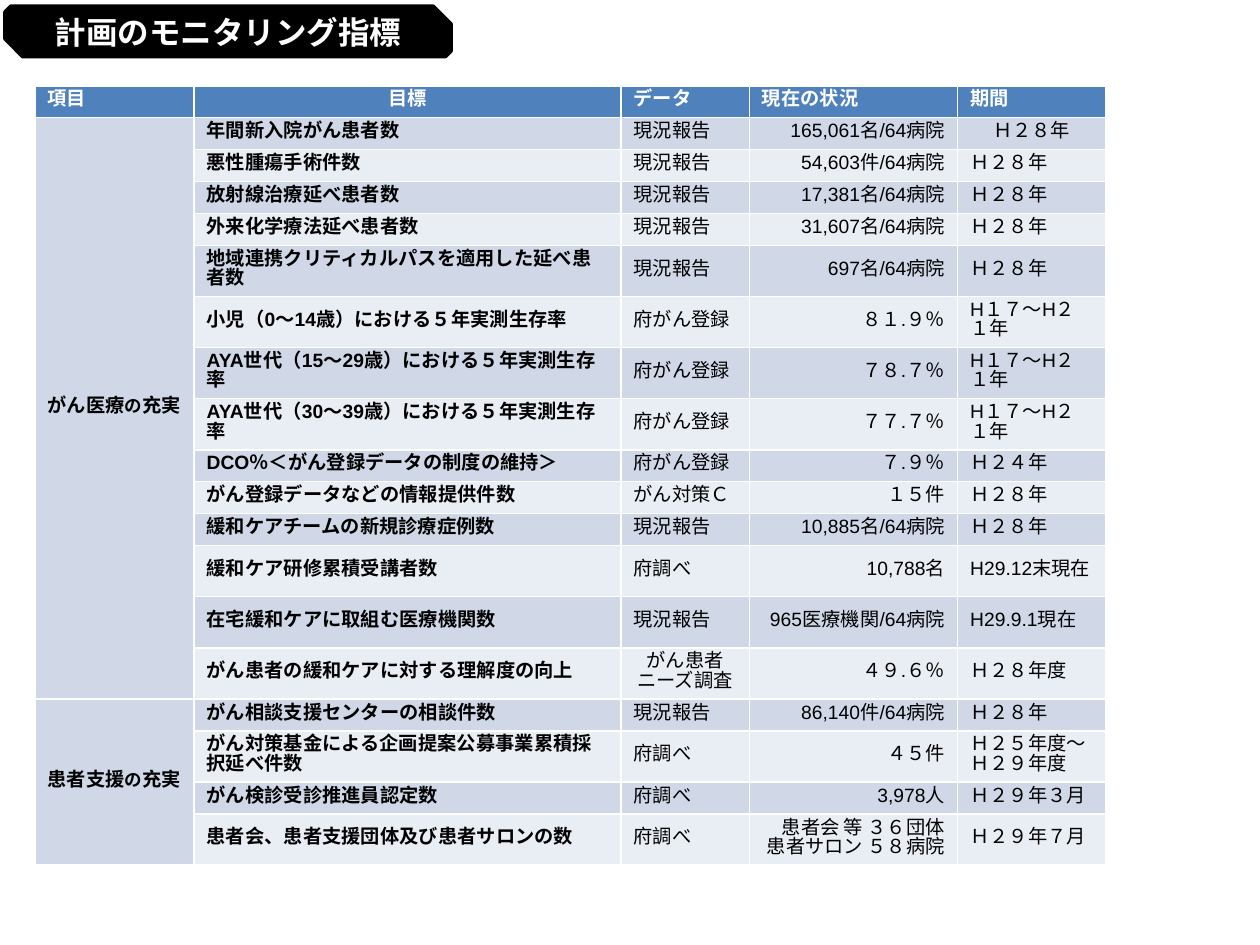
import pptx
import pptx.dml.color
import pptx.enum.shapes
import pptx.enum.text
import pptx.util

Pt = pptx.util.Pt
ALIGN = pptx.enum.text.PP_ALIGN
MIDDLE = pptx.enum.text.MSO_ANCHOR.MIDDLE

COLORS = {"black": "000000", "white": "FFFFFF", "header": "4F81BD",
          "odd": "D0D8E8", "even": "E9EDF4"}

TITLE = "計画のモニタリング指標"
HEADERS = ["項目", "目標", "データ", "現在の状況", "期間"]
COLUMN_WIDTHS = [90.9, 243.9, 73.4, 119, 84.8]
SECTIONS = [
    (("がん医療", "の", "充実"), [
        ("年間新入院がん患者数", "現況報告", "165,061名/64病院", "Ｈ２８年"),
        ("悪性腫瘍手術件数", "現況報告", "54,603件/64病院", "Ｈ２８年"),
        ("放射線治療延べ患者数", "現況報告", "17,381名/64病院", "Ｈ２８年"),
        ("外来化学療法延べ患者数", "現況報告", "31,607名/64病院", "Ｈ２８年"),
        ("地域連携クリティカルパスを適用した延べ患者数", "現況報告", "697名/64病院", "Ｈ２８年"),
        ("小児（0～14歳）における５年実測生存率", "府がん登録", "８１.９％", "H１７～H２１年"),
        ("AYA世代（15～29歳）における５年実測生存率", "府がん登録", "７８.７％", "H１７～H２１年"),
        ("AYA世代（30～39歳）における５年実測生存率", "府がん登録", "７７.７％", "H１７～H２１年"),
        ("DCO％＜がん登録データの制度の維持＞", "府がん登録", "７.９％", "Ｈ２４年"),
        ("がん登録データなどの情報提供件数", "がん対策Ｃ", "１５件", "Ｈ２８年"),
        ("緩和ケアチームの新規診療症例数", "現況報告", "10,885名/64病院", "Ｈ２８年"),
        ("緩和ケア研修累積受講者数", "府調べ", "10,788名", "H29.12末現在"),
        ("在宅緩和ケアに取組む医療機関数", "現況報告", "965医療機関/64病院", "H29.9.1現在"),
        ("がん患者の緩和ケアに対する理解度の向上", "がん患者\nニーズ調査", "４９.６％", "Ｈ２８年度"),
    ]),
    (("患者支援", "の", "充実"), [
        ("がん相談支援センターの相談件数", "現況報告", "86,140件/64病院", "Ｈ２８年"),
        ("がん対策基金による企画提案公募事業累積採択延べ件数", "府調べ", "４５件",
         "Ｈ２５年度～\nＨ２９年度"),
        ("がん検診受診推進員認定数", "府調べ", "3,978人", "Ｈ２９年３月"),
        ("患者会、患者支援団体及び患者サロンの数", "府調べ",
         "患者会 等 ３６団体\n患者サロン ５８病院", "Ｈ２９年７月"),
    ]),
]
TWO_LINE_ROWS = {5, 6, 7, 8, 12, 13, 14, 16, 18}
CENTERED_CELLS = {(0, 1), (1, 4), (14, 2)}
VALUE_COLUMN = 3
LINE_HEIGHT = 11
CELL_PADDING = 7.2


def rgb(name):
    return pptx.dml.color.RGBColor.from_string(COLORS[name])


def style_font(font, size, color, bold, family="Arial"):
    font.size = Pt(size)
    font.name = family
    font.bold = bold
    font.color.rgb = rgb(color)


def fill_cell(table, row, column, text, fill, color="black", bold=False):
    cell = table.cell(row, column)
    cell.fill.solid()
    cell.fill.fore_color.rgb = rgb(fill)
    cell.vertical_anchor = MIDDLE
    cell.text_frame.text = text
    for paragraph in cell.text_frame.paragraphs:
        paragraph.line_spacing = Pt(LINE_HEIGHT)
        if (row, column) in CENTERED_CELLS:
            paragraph.alignment = ALIGN.CENTER
        elif column == VALUE_COLUMN and row > 0:
            paragraph.alignment = ALIGN.RIGHT
        style_font(paragraph.font, 11, color, bold)
    return cell


def add_title(slide):
    shape = slide.shapes.add_shape(
        pptx.enum.shapes.MSO_SHAPE.SNIP_2_DIAG_RECTANGLE, Pt(2.9), Pt(3.6), Pt(254.9), Pt(28.8))
    shape.adjustments[0] = 0.11
    shape.adjustments[1] = 0.35
    shape.shadow.inherit = False
    shape.fill.solid()
    shape.fill.fore_color.rgb = rgb("black")
    shape.line.color.rgb = rgb("black")
    shape.line.width = Pt(2)
    frame = shape.text_frame
    frame.margin_top = frame.margin_bottom = 0
    frame.vertical_anchor = MIDDLE
    paragraph = frame.paragraphs[0]
    paragraph.text = TITLE
    paragraph.alignment = ALIGN.CENTER
    style_font(paragraph.font, 18, "white", True, "Calibri")


def add_indicator_table(slide):
    row_count = 1 + sum(len(indicators) for _, indicators in SECTIONS)
    heights = [CELL_PADDING + LINE_HEIGHT * (2 if row in TWO_LINE_ROWS else 1)
               for row in range(row_count)]
    table = slide.shapes.add_table(row_count, len(HEADERS), Pt(20), Pt(49),
                                   Pt(sum(COLUMN_WIDTHS)), Pt(sum(heights))).table
    for column, width in zip(table.columns, COLUMN_WIDTHS):
        column.width = Pt(width)
    for row, height in zip(table.rows, heights):
        row.height = Pt(height)

    for column, header in enumerate(HEADERS):
        fill_cell(table, 0, column, header, "header", "white", True)

    row = 1
    for category, indicators in SECTIONS:
        category_cell = fill_cell(table, row, 0, "", "odd", bold=True)
        paragraph = category_cell.text_frame.paragraphs[0]
        for part in category:
            run = paragraph.add_run()
            run.text = part
            style_font(run.font, 10 if part == "の" else 11, "black", True)
        category_cell.merge(table.cell(row + len(indicators) - 1, 0))
        for indicator in indicators:
            fill = "odd" if row % 2 else "even"
            for column, text in enumerate(indicator, start=1):
                fill_cell(table, row, column, text, fill, bold=column == 1)
            row += 1


def main():
    presentation = pptx.Presentation()
    presentation.slide_width = Pt(720)
    presentation.slide_height = Pt(540)
    slide = presentation.slides.add_slide(presentation.slide_layouts[6])
    add_title(slide)
    add_indicator_table(slide)
    presentation.save("out.pptx")


if __name__ == "__main__":
    main()
